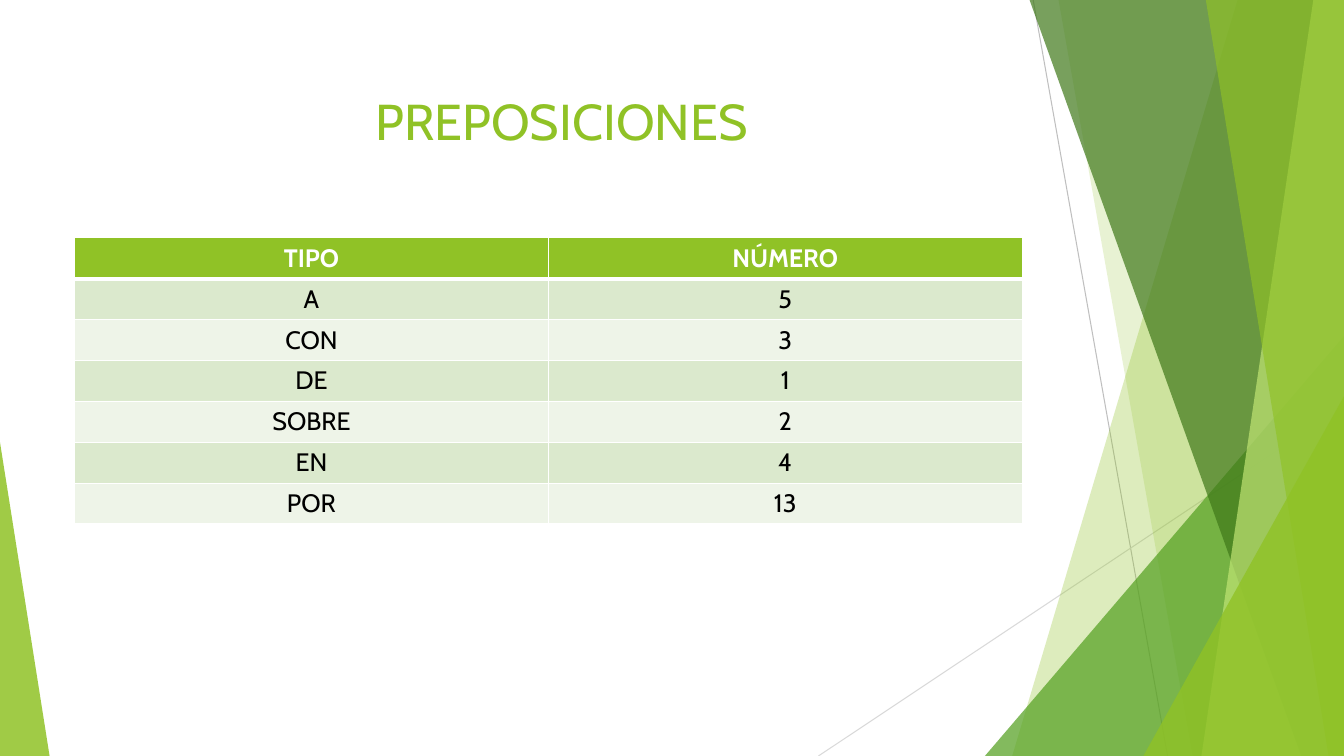
from dataclasses import dataclass

import lxml.etree
import pptx
import pptx.dml.color
import pptx.enum.shapes
import pptx.enum.text
import pptx.oxml.ns
import pptx.util

Pt = pptx.util.Pt
qn = pptx.oxml.ns.qn
CENTER = pptx.enum.text.PP_ALIGN.CENTER
MIDDLE = pptx.enum.text.MSO_ANCHOR.MIDDLE

WIDTH, HEIGHT = 960, 540
TOP = -0.7
FONT = "Cabin"
GREEN, WHITE, BLACK = "90C226", "FFFFFF", "000000"
BANDS = ("DBE9CD", "EEF4E8")
ROW_HEIGHT, COLUMN_WIDTH = 29.2, 338.4


@dataclass
class Ray:
    start: tuple[float, float]
    end: tuple[float, float]
    color: str


@dataclass
class Ribbon:
    top_left: float
    bottom_left: float
    color: str
    opacity: int


@dataclass
class Wedge:
    left: float
    top: float
    width: float
    apex: float
    color: str
    opacity: int


RAYS = (
    Ray((738, 0), (834, HEIGHT), "BFBFBF"),
    Ray((WIDTH, 290), (584.6, HEIGHT), "D9D9D9"),
)
FACETS = (
    Ribbon(884.2, 723, GREEN, 30),
    Ribbon(756, 851.8, GREEN, 20),
    Wedge(703.5, 240, 256.5, 1, "54A021", 72),
    Ribbon(735.2, 929.5, "3F7819", 70),
    Ribbon(938.2, 858.2, "C0E474", 70),
    Ribbon(861.2, 949, GREEN, 65),
    Wedge(816.7, 283, 143.3, 1, GREEN, 80),
    Wedge(0, 316, 35.4, 0, GREEN, 85),
)
ROWS = (
    ("TIPO", "NÚMERO"),
    ("A", "5"),
    ("CON", "3"),
    ("DE", "1"),
    ("SOBRE", "2"),
    ("EN", "4"),
    ("POR", "13"),
)


def rgb(color: str) -> pptx.dml.color.RGBColor:
    return pptx.dml.color.RGBColor.from_string(color)


def draw_ray(page, ray: Ray) -> None:
    straight = pptx.enum.shapes.MSO_CONNECTOR.STRAIGHT
    ends = [Pt(value) for value in ray.start + ray.end]
    line = page.shapes.add_connector(straight, *ends)
    line.line.color.rgb = rgb(ray.color)
    line.line.width = Pt(0.75)
    lxml.etree.SubElement(line.element.spPr, qn("a:effectLst"))


def draw_facet(page, facet: Ribbon | Wedge) -> None:
    if isinstance(facet, Ribbon):
        outline = page.shapes.build_freeform(Pt(facet.top_left), Pt(TOP))
        corners = ((WIDTH, TOP), (WIDTH, HEIGHT), (facet.bottom_left, HEIGHT))
        outline.add_line_segments([(Pt(x), Pt(y)) for x, y in corners], close=True)
        shape = outline.convert_to_shape()
    else:
        shape = page.shapes.add_shape(
            pptx.enum.shapes.MSO_SHAPE.ISOSCELES_TRIANGLE,
            Pt(facet.left), Pt(facet.top), Pt(facet.width), Pt(HEIGHT - facet.top),
        )
        shape.adjustments[0] = facet.apex
    shape.shadow.inherit = False
    shape.line.fill.background()
    shape.fill.solid()
    shape.fill.fore_color.rgb = rgb(facet.color)
    paint = shape.element.spPr.find(f"{qn('a:solidFill')}/{qn('a:srgbClr')}")
    lxml.etree.SubElement(paint, qn("a:alpha"), val=str(facet.opacity * 1000))


def write(frame, text: str, size: float, color: str, bold: bool = False) -> None:
    para = frame.paragraphs[0]
    para.text = text
    para.alignment = CENTER
    para.font.name = FONT
    para.font.size = Pt(size)
    para.font.bold = bold
    para.font.color.rgb = rgb(color)


def draw_borders(cell, top: float, bottom: float) -> None:
    properties = cell._tc.get_or_add_tcPr()
    widths = {"lnL": 1, "lnR": 1, "lnT": top, "lnB": bottom}
    for position, (side, width) in enumerate(widths.items()):
        border = lxml.etree.Element(qn(f"a:{side}"), w=str(Pt(width)))
        paint = lxml.etree.SubElement(border, qn("a:solidFill"))
        lxml.etree.SubElement(paint, qn("a:srgbClr"), val=WHITE)
        properties.insert(position, border)


def draw_title(page) -> None:
    title = page.shapes.title
    title.left, title.top = Pt(62.6), Pt(60.5)
    title.width, title.height = Pt(676.8), Pt(51)
    title.text_frame.vertical_anchor = MIDDLE
    write(title.text_frame, "PREPOSICIONES", 36, GREEN)


def draw_table(page) -> None:
    columns = len(ROWS[0])
    table = page.shapes.add_table(
        len(ROWS), columns, Pt(53.3), Pt(169.9),
        Pt(COLUMN_WIDTH * columns), Pt(ROW_HEIGHT * len(ROWS)),
    ).table
    table.horz_banding = False
    for index, texts in enumerate(ROWS):
        header = index == 0
        table.rows[index].height = Pt(ROW_HEIGHT)
        for column, text in enumerate(texts):
            cell = table.cell(index, column)
            cell.fill.solid()
            cell.fill.fore_color.rgb = rgb(GREEN if header else BANDS[(index - 1) % 2])
            write(cell.text_frame, text, 18, WHITE if header else BLACK, header)
            draw_borders(cell, 3 if index == 1 else 1, 3 if header else 1)


def main() -> None:
    deck = pptx.Presentation()
    deck.slide_width, deck.slide_height = Pt(WIDTH), Pt(HEIGHT)
    page = deck.slides.add_slide(deck.slide_layouts.get_by_name("Title Only"))
    for ray in RAYS:
        draw_ray(page, ray)
    for facet in FACETS:
        draw_facet(page, facet)
    draw_title(page)
    draw_table(page)
    deck.save("out.pptx")


if __name__ == "__main__":
    main()
